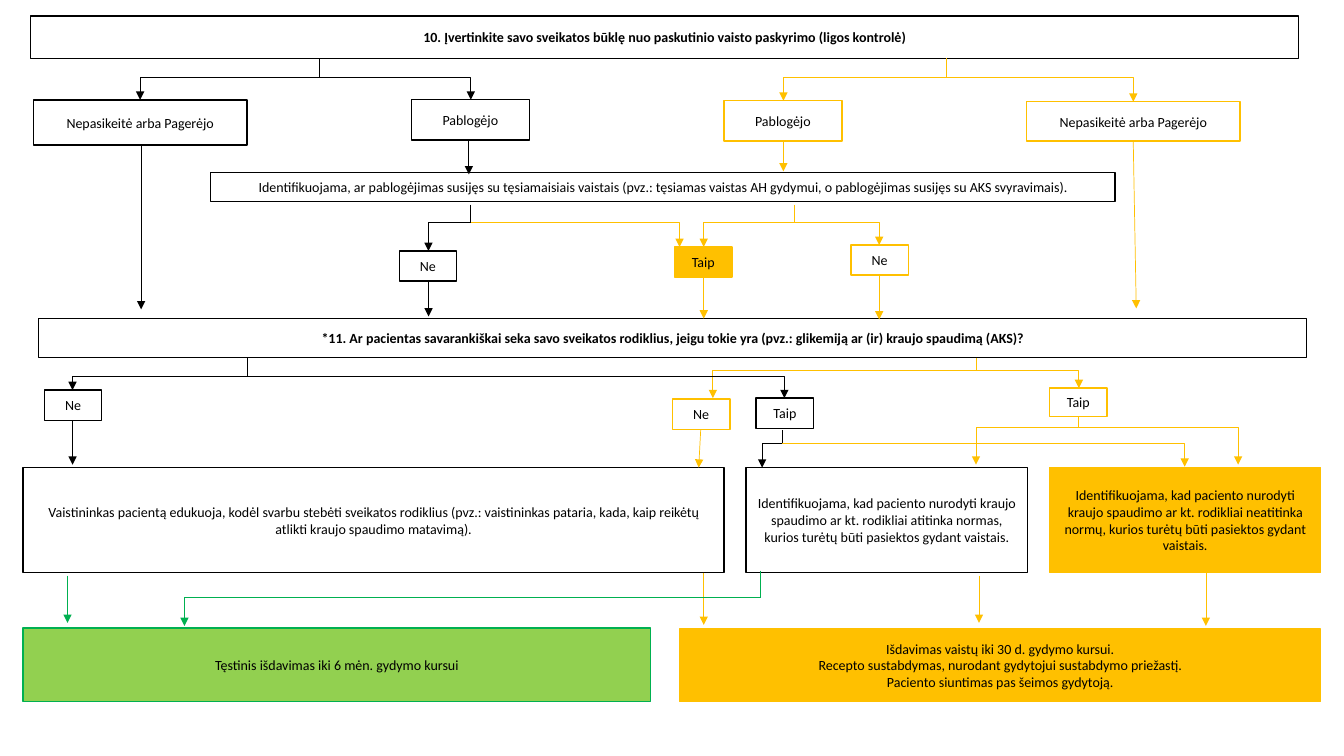
from lxml import etree
from pptx import Presentation
from pptx.dml.color import RGBColor
from pptx.enum.shapes import MSO_CONNECTOR, MSO_SHAPE
from pptx.enum.text import MSO_ANCHOR, MSO_AUTO_SIZE, PP_ALIGN
from pptx.oxml.ns import qn
from pptx.util import Inches, Pt

RECTANGLE = MSO_SHAPE.RECTANGLE
STRAIGHT, ELBOW = MSO_CONNECTOR.STRAIGHT, MSO_CONNECTOR.ELBOW
MIDDLE, CENTER, NO_AUTOFIT = MSO_ANCHOR.MIDDLE, PP_ALIGN.CENTER, MSO_AUTO_SIZE.NONE
TITLE_ONLY = 5

COLORS = {
    "black": "000000",
    "white": "FFFFFF",
    "amber": "FFC000",
    "green": "00B050",
    "lime": "92D050",
}


def style_box(box, lines, outline, fill="white", bold=False):
    box.fill.solid()
    box.fill.fore_color.rgb = RGBColor.from_string(COLORS[fill])
    box.line.color.rgb = RGBColor.from_string(COLORS[outline])
    box.line.width = Pt(1)
    frame = box.text_frame
    frame.word_wrap = True
    frame.auto_size = NO_AUTOFIT
    frame.vertical_anchor = MIDDLE
    for index, line in enumerate(lines):
        paragraph = frame.add_paragraph() if index else frame.paragraphs[0]
        paragraph.alignment = CENTER
        run = paragraph.add_run()
        run.text = line
        run.font.name = "Calibri"
        run.font.size = Pt(10)
        run.font.bold = bold
        run.font.color.rgb = RGBColor.from_string(COLORS["black"])


def draw_connector(kind, start, end, color, arrow=True):
    """An elbow runs sideways first, then down to its end."""
    connector = slide.shapes.add_connector(kind, *map(Inches, start + end))
    connector.line.color.rgb = RGBColor.from_string(COLORS[color])
    connector.line.width = Pt(0.5)
    properties = connector.element.spPr
    if kind == ELBOW:
        properties.find(qn("a:prstGeom")).set("prst", "bentConnector2")
    if arrow:
        outline = properties.find(qn("a:ln"))
        etree.SubElement(outline, qn("a:tailEnd"), type="triangle")
    etree.SubElement(properties, qn("a:effectLst"))


prs = Presentation()
prs.slide_width = Inches(13.33)
prs.slide_height = Inches(7.5)
slide = prs.slides.add_slide(prs.slide_layouts[TITLE_ONLY])

# Opening question
title = slide.shapes.title
title.left, title.top, title.width, title.height = map(Inches, (0.3, 0.16, 12.58, 0.42))
style_box(
    title,
    ["10. Įvertinkite savo sveikatos būklę nuo paskutinio vaisto paskyrimo (ligos kontrolė)"],
    "black",
    bold=True,
)

# Second question
self_monitoring = slide.shapes.add_shape(RECTANGLE, *map(Inches, (0.38, 3.16, 12.58, 0.39)))
self_monitoring.shadow.inherit = False
style_box(
    self_monitoring,
    ["*11. Ar pacientas savarankiškai seka savo sveikatos rodiklius, jeigu tokie yra "
     "(pvz.: glikemiją ar (ir) kraujo spaudimą (AKS)?"],
    "black",
    bold=True,
)

# Answers, steps and outcomes: left, top, width, height, outline, fill, lines
steps = [
    (0.33, 0.99, 2.12, 0.45, "black", "white", ["Nepasikeitė arba Pagerėjo"]),
    (4.08, 0.99, 1.17, 0.4, "black", "white", ["Pablogėjo"]),
    (7.18, 1, 1.17, 0.4, "amber", "white", ["Pablogėjo"]),
    (10.18, 1.01, 2.12, 0.39, "amber", "white", ["Nepasikeitė arba Pagerėjo"]),
    (2.09, 1.71, 8.97, 0.29, "black", "white",
     ["Identifikuojama, ar pablogėjimas susijęs su tęsiamaisiais vaistais (pvz.: tęsiamas "
      "vaistas AH gydymui, o pablogėjimas susijęs su AKS svyravimais)."]),
    (3.96, 2.49, 0.57, 0.3, "black", "white", ["Ne"]),
    (6.69, 2.45, 0.57, 0.3, "amber", "amber", ["Taip"]),
    (8.44, 2.43, 0.57, 0.3, "amber", "white", ["Ne"]),
    (0.44, 3.87, 0.57, 0.3, "black", "white", ["Ne"]),
    (6.67, 3.96, 0.57, 0.3, "amber", "white", ["Ne"]),
    (7.5, 3.95, 0.57, 0.3, "black", "white", ["Taip"]),
    (10.41, 3.85, 0.57, 0.28, "amber", "white", ["Taip"]),
    (0.23, 4.64, 6.95, 1.04, "black", "white",
     ["Vaistininkas pacientą edukuoja, kodėl svarbu stebėti sveikatos rodiklius (pvz.: "
      "vaistininkas pataria, kada, kaip reikėtų atlikti kraujo spaudimo matavimą)."]),
    (7.4, 4.64, 2.79, 1.04, "black", "white",
     ["Identifikuojama, kad paciento nurodyti kraujo spaudimo ar kt. rodikliai atitinka "
      "normas, kurios turėtų būti pasiektos gydant vaistais."]),
    (10.41, 4.64, 2.69, 1.04, "amber", "amber",
     ["Identifikuojama, kad paciento nurodyti kraujo spaudimo ar kt. rodikliai neatitinka "
      "normų, kurios turėtų būti pasiektos gydant vaistais."]),
    (0.23, 6.23, 6.22, 0.73, "green", "lime", ["Tęstinis išdavimas iki 6 mėn. gydymo kursui"]),
    (6.74, 6.24, 6.36, 0.72, "amber", "amber",
     ["Išdavimas vaistų iki 30 d. gydymo kursui.",
      "Recepto sustabdymas, nurodant gydytojui sustabdymo priežastį.",
      "Paciento siuntimas pas šeimos gydytoją."]),
]
for left, top, width, height, outline, fill, lines in steps:
    step = slide.shapes.add_shape(RECTANGLE, *map(Inches, (left, top, width, height)))
    step.shadow.inherit = False
    style_box(step, lines, outline, fill)

# Direct arrows between consecutive steps
arrows = [
    ((1.4, 1.43), (1.4, 3.07), "black"),
    ((4.65, 1.4), (4.65, 1.73), "black"),
    ((7.77, 1.41), (7.77, 1.7), "amber"),
    ((11.24, 1.41), (11.27, 3.06), "amber"),
    ((4.25, 2.8), (4.25, 3.14), "black"),
    ((6.98, 2.75), (6.98, 3.16), "amber"),
    ((8.72, 2.73), (8.72, 3.17), "amber"),
    ((0.72, 4.18), (0.72, 4.61), "black"),
    ((6.95, 4.26), (6.93, 4.64), "amber"),
    ((0.67, 5.71), (0.67, 6.18), "green"),
    ((6.98, 5.68), (6.98, 6.2), "amber"),
    ((9.71, 5.71), (9.71, 6.18), "amber"),
    ((11.96, 5.68), (11.96, 6.21), "amber"),
]
for start, end, color in arrows:
    draw_connector(STRAIGHT, start, end, color)

# Forks: stem x, stem top, bend height, stem colour, branches (end x, end y, colour)
forks = [
    (3.17, 0.58, 0.77, "black", [(1.39, 0.99, "black"), (4.67, 0.99, "black")]),
    (9.39, 0.58, 0.77, "amber", [(7.77, 1, "amber"), (11.24, 1.01, "amber")]),
    (4.67, 2.03, 2.21, "black", [(4.25, 2.49, "black"), (6.74, 2.45, "amber")]),
    (7.88, 2.03, 2.21, "amber", [(6.98, 2.45, "amber"), (8.72, 2.43, "amber")]),
    (9.68, 3.55, 3.67, "amber", [(7.07, 3.95, "amber"), (10.7, 3.85, "amber")]),
    (2.45, 3.55, 3.73, "black", [(0.72, 3.87, "black"), (7.78, 3.95, "black")]),
    (10.7, 4.13, 4.24, "amber", [(9.68, 4.61, "amber"), (12.28, 4.61, "amber")]),
    (7.76, 4.27, 4.4, "black", [(11.75, 4.63, "amber"), (7.56, 4.64, "black")]),
    (7.54, 5.66, 5.93, "green", [(1.83, 6.21, "green")]),
]
for stem_x, stem_top, bend_y, stem_color, branches in forks:
    draw_connector(STRAIGHT, (stem_x, stem_top), (stem_x, bend_y), stem_color, arrow=False)
    for end_x, end_y, color in branches:
        draw_connector(ELBOW, (stem_x, bend_y), (end_x, end_y), color)

prs.save("out.pptx")
